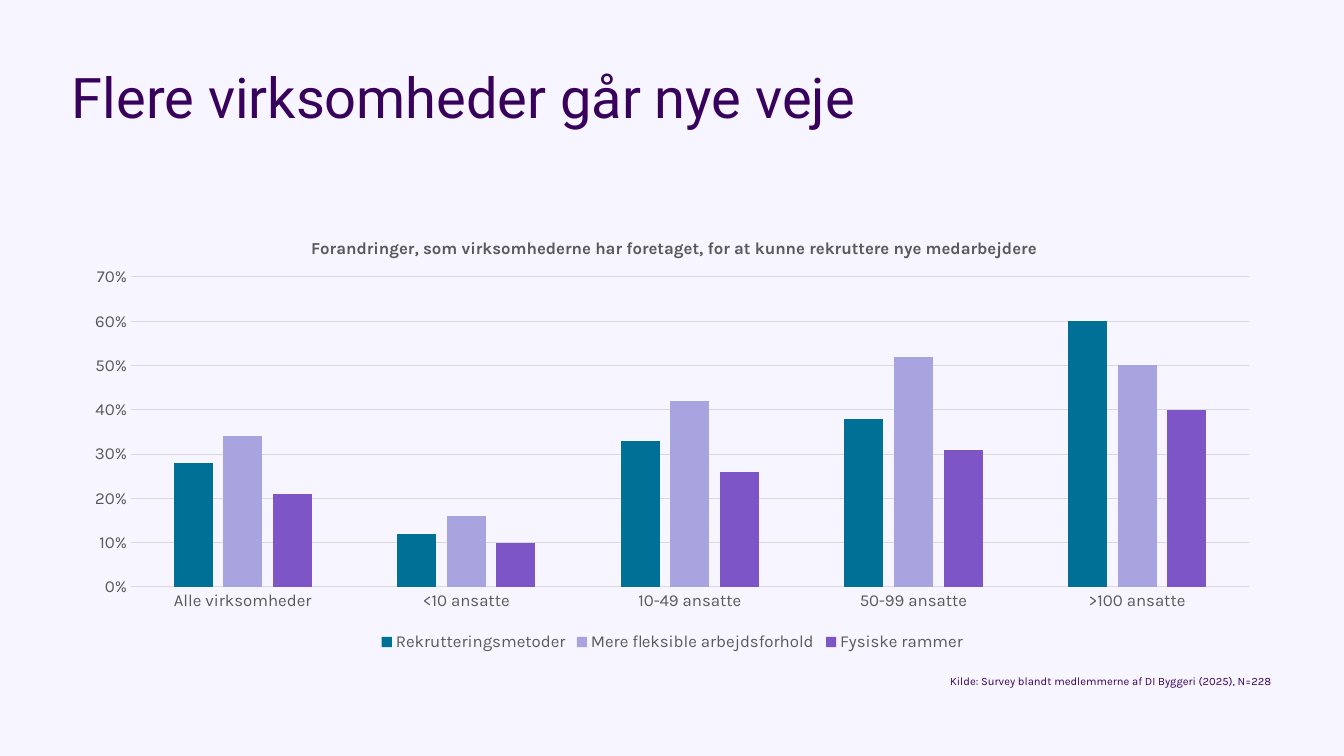
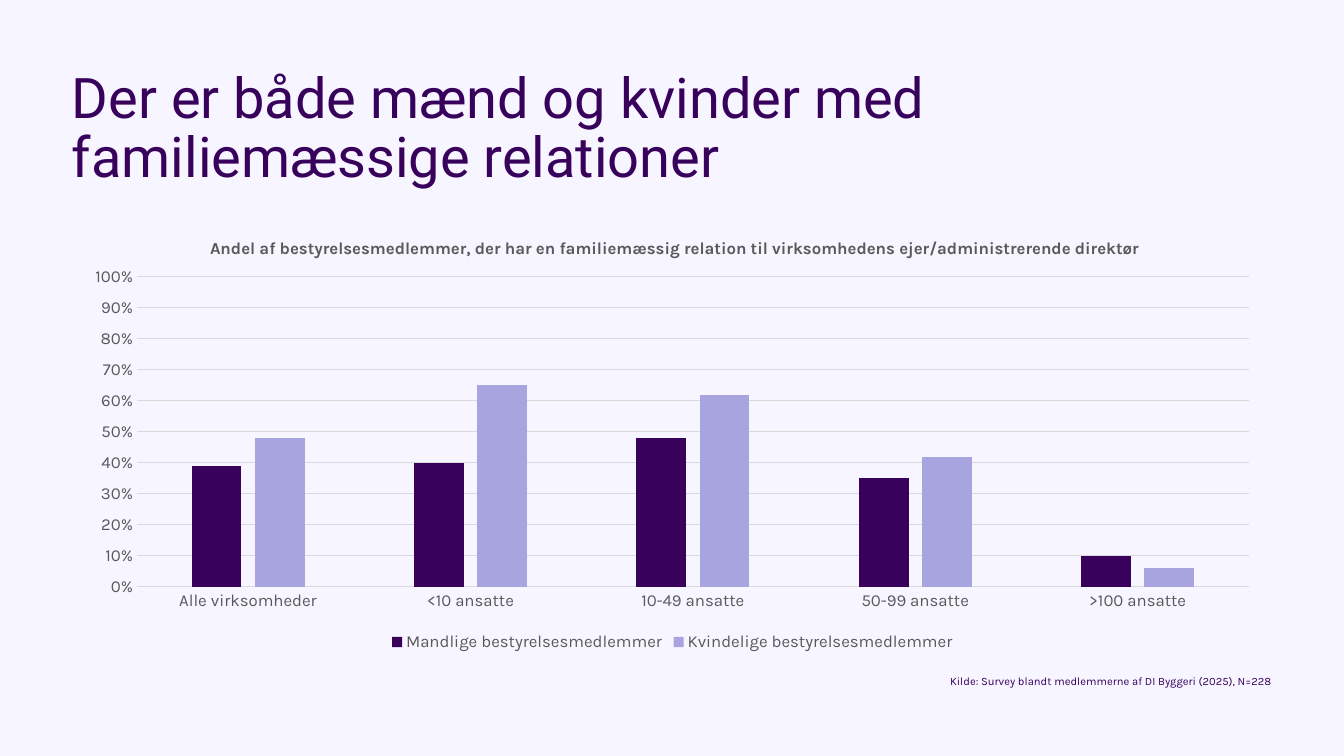
"""Build two survey slides, each with a title, a column chart and a source line."""
from lxml.etree import SubElement
from pptx import Presentation
from pptx.chart.data import CategoryChartData
from pptx.dml.color import RGBColor
from pptx.enum.chart import XL_CHART_TYPE, XL_LEGEND_POSITION, XL_TICK_MARK
from pptx.enum.text import MSO_ANCHOR, MSO_AUTO_SIZE, PP_ALIGN
from pptx.oxml import parse_xml
from pptx.oxml.ns import nsdecls, qn
from pptx.util import Emu, Pt

PAPER = RGBColor(0xF7, 0xF5, 0xFF)
PLUM = RGBColor(0x38, 0x02, 0x5C)
TEAL = RGBColor(0x00, 0x70, 0x96)
LILAC = RGBColor(0xA7, 0xA4, 0xE0)
VIOLET = RGBColor(0x7D, 0x55, 0xC7)
GREY = RGBColor(0x59, 0x59, 0x59)
RULE = RGBColor(0xD9, 0xD9, 0xD9)
HEAD_FONT, BODY_FONT = "Roboto", "Karla"

SIZE = (1344, 756)
HEAD = (72, 72, 1201, 143)
CHART = (72, 215, 1201, 441)
FOOT = (584, 656, 688, 32)
PLOT_TOP, PLOT_END, PLOT_RIGHT = 277, 587, 1249
NAME_TOP = 234

GROUPS = ["Alle virksomheder", "<10 ansatte", "10-49 ansatte",
          "50-99 ansatte", ">100 ansatte"]
SOURCE = "Kilde: Survey blandt medlemmerne af DI Byggeri (2025), N=228"
SLIDES = [
    {
        "head": "Flere virksomheder går nye veje",
        "name": "Forandringer, som virksomhederne har foretaget, "
                "for at kunne rekruttere nye medarbejdere",
        "name_left": 308, "plot_left": 131, "top": 0.7,
        "series": [
            ("Rekrutteringsmetoder", TEAL, (0.28, 0.12, 0.33, 0.38, 0.6)),
            ("Mere fleksible arbejdsforhold", LILAC,
             (0.34, 0.16, 0.42, 0.52, 0.5)),
            ("Fysiske rammer", VIOLET, (0.21, 0.1, 0.26, 0.31, 0.4)),
        ],
    },
    {
        "head": "Der er både mænd og kvinder med familiemæssige relationer",
        "name": "Andel af bestyrelsesmedlemmer, der har en familiemæssig "
                "relation til virksomhedens ejer/administrerende direktør",
        "name_left": 207, "plot_left": 137, "top": 1,
        "series": [
            ("Mandlige bestyrelsesmedlemmer", PLUM,
             (0.39, 0.4, 0.48, 0.35, 0.1)),
            ("Kvindelige bestyrelsesmedlemmer", LILAC,
             (0.48, 0.65, 0.62, 0.42, 0.06)),
        ],
    },
]


def px(num):
    return Emu(round(num * 914400 / 100.8))


def style(font, face, size, color, bold=False):
    font.name, font.size, font.bold = face, Pt(size), bold
    font.color.rgb = color


def write(shape, box, text, face, size, space, anchor, align):
    shape.left, shape.top, shape.width, shape.height = map(px, box)
    frame = shape.text_frame
    frame.margin_left = frame.margin_top = 0
    frame.margin_right = frame.margin_bottom = 0
    frame.word_wrap = True
    frame.auto_size = MSO_AUTO_SIZE.NONE
    frame.vertical_anchor = anchor
    para = frame.paragraphs[0]
    para.alignment, para.line_spacing = align, space
    run = para.add_run()
    run.text = text
    style(run.font, face, size, PLUM)
    return para


def place(node, index, left, top, size=None):
    old = node.find(qn("c:layout"))
    if old is not None:
        node.remove(old)
    layout = parse_xml(f"<c:layout {nsdecls('c')}/>")
    node.insert(index, layout)
    spot = SubElement(layout, qn("c:manualLayout"))
    parts = [("xMode", "edge"), ("yMode", "edge"),
             ("x", (left - CHART[0]) / CHART[2]),
             ("y", (top - CHART[1]) / CHART[3])]
    if size:
        parts.insert(0, ("layoutTarget", "inner"))
        parts += [("w", size[0] / CHART[2]), ("h", size[1] / CHART[3])]
    for tag, val in parts:
        SubElement(spot, qn("c:" + tag)).set("val", str(val))


def add_columns(slide, item):
    data = CategoryChartData(number_format="0%")
    data.categories = GROUPS
    for name, _, vals in item["series"]:
        data.add_series(name, vals)
    chart = slide.shapes.add_chart(
        XL_CHART_TYPE.COLUMN_CLUSTERED, *map(px, CHART), data).chart
    style(chart.font, BODY_FONT, 12, GREY)

    chart.has_title = True
    run = chart.chart_title.text_frame.paragraphs[0].add_run()
    run.text = item["name"]
    style(run.font, BODY_FONT, 12, GREY, True)
    chart.chart_title.include_in_layout = False
    place(chart.chart_title._element, 1, item["name_left"], NAME_TOP)

    chart.has_legend = True
    chart.legend.position = XL_LEGEND_POSITION.BOTTOM
    chart.legend.include_in_layout = False
    style(chart.legend.font, BODY_FONT, 12, GREY)

    plot = chart.plots[0]
    plot.gap_width, plot.overlap, plot.vary_by_categories = 219, -27, False
    for series, (_, color, _) in zip(plot.series, item["series"]):
        series.format.fill.solid()
        series.format.fill.fore_color.rgb = color
        series.invert_if_negative = False

    cats, vals = chart.category_axis, chart.value_axis
    for axis in (cats, vals):
        axis.major_tick_mark = axis.minor_tick_mark = XL_TICK_MARK.NONE
        style(axis.tick_labels.font, BODY_FONT, 12, GREY)
    vals.minimum_scale, vals.maximum_scale = 0, item["top"]
    vals.major_unit = 0.1
    vals.tick_labels.number_format = "0%"
    vals.tick_labels.number_format_is_linked = False
    vals.format.line.fill.background()
    for line in (cats.format.line, vals.major_gridlines.format.line):
        line.color.rgb, line.width = RULE, Pt(0.75)

    left = item["plot_left"]
    area = chart._chartSpace.chart.plotArea
    place(area, 0, left, PLOT_TOP,
          (PLOT_RIGHT - left, PLOT_END - PLOT_TOP))


def main():
    deck = Presentation()
    deck.slide_width, deck.slide_height = map(px, SIZE)
    back = deck.slide_master.background.fill
    back.solid()
    back.fore_color.rgb = PAPER
    for item in SLIDES:
        slide = deck.slides.add_slide(deck.slide_layouts[5])
        write(slide.shapes.title, HEAD, item["head"], HEAD_FONT, 40, 0.87,
              MSO_ANCHOR.TOP, PP_ALIGN.LEFT)
        add_columns(slide, item)
        foot = slide.shapes.add_textbox(*map(px, FOOT))
        para = write(foot, FOOT, SOURCE, BODY_FONT, 8, 0.93,
                     MSO_ANCHOR.BOTTOM, PP_ALIGN.RIGHT)
        para.space_after = Pt(3)
    deck.save("out.pptx")


if __name__ == "__main__":
    main()
